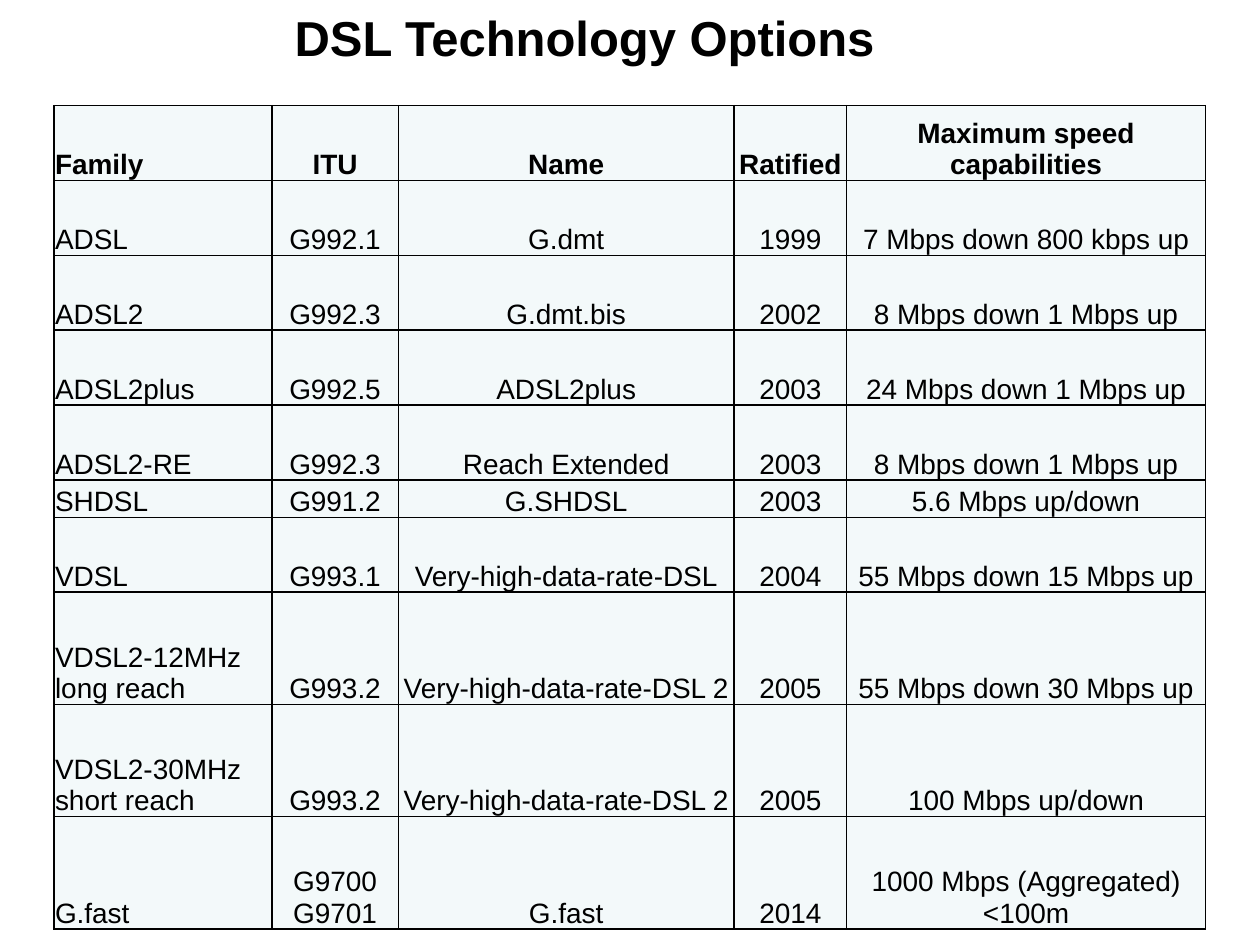
from dataclasses import dataclass

from lxml.etree import SubElement
from pptx import Presentation
from pptx.dml.color import RGBColor
from pptx.enum.text import MSO_ANCHOR, MSO_AUTO_SIZE, PP_ALIGN
from pptx.oxml.ns import qn
from pptx.util import Cm, Pt


@dataclass(frozen=True)
class Theme:
    font: str = "Arial"
    ink: str = "000000"
    cell: str = "F3F9FA"
    title_size: int = 28
    body_size: int = 16
    border: int = 1


THEME = Theme()
COL_WIDTHS = (4.39, 2.55, 6.77, 2.27, 7.23)
ROW_UNITS = (2, 2, 2, 2, 2, 1, 2, 3, 3, 3)
TABLE_HEIGHT = 16.6
ROWS = (
    ("Family", "ITU", "Name", "Ratified", "Maximum speed capabilities"),
    ("ADSL", "G992.1", "G.dmt", "1999", "7 Mbps down 800 kbps up"),
    ("ADSL2", "G992.3", "G.dmt.bis", "2002", "8 Mbps down 1 Mbps up"),
    ("ADSL2plus", "G992.5", "ADSL2plus", "2003", "24 Mbps down 1 Mbps up"),
    ("ADSL2-RE", "G992.3", "Reach Extended", "2003", "8 Mbps down 1 Mbps up"),
    ("SHDSL", "G991.2", "G.SHDSL", "2003", "5.6 Mbps up/down"),
    ("VDSL", "G993.1", "Very-high-data-rate-DSL", "2004", "55 Mbps down 15 Mbps up"),
    ("VDSL2-12MHz long reach", "G993.2", "Very-high-data-rate-DSL 2", "2005",
     "55 Mbps down 30 Mbps up"),
    ("VDSL2-30MHz short reach", "G993.2", "Very-high-data-rate-DSL 2", "2005",
     "100 Mbps up/down"),
    ("G.fast", "G9700 G9701", "G.fast", "2014", "1000 Mbps (Aggregated) <100m"),
)


def write_text(tf, text, size=THEME.body_size, bold=False, align=PP_ALIGN.LEFT):
    p = tf.paragraphs[0]
    p.alignment = align
    r = p.add_run()
    r.text = text
    r.font.name = THEME.font
    r.font.size = Pt(size)
    r.font.bold = bold
    r.font.color.rgb = RGBColor.from_string(THEME.ink)


def add_title(s, text):
    sp = s.shapes.add_textbox(Cm(5.69), Cm(0.03), Cm(12.34), Cm(1.45))
    tf = sp.text_frame
    tf.word_wrap = False
    tf.auto_size = MSO_AUTO_SIZE.SHAPE_TO_FIT_TEXT
    write_text(tf, text, size=THEME.title_size, bold=True)


def set_borders(cell):
    tc_pr = cell._tc.get_or_add_tcPr()
    for side in ("lnL", "lnR", "lnT", "lnB"):
        ln = SubElement(tc_pr, qn(f"a:{side}"), w=str(Pt(THEME.border)))
        fill = SubElement(ln, qn("a:solidFill"))
        SubElement(fill, qn("a:srgbClr"), val=THEME.ink)


def format_cell(cell):
    cell.margin_left = cell.margin_right = cell.margin_top = Cm(0.02)
    cell.margin_bottom = 0
    cell.vertical_anchor = MSO_ANCHOR.BOTTOM
    set_borders(cell)
    cell.fill.solid()
    cell.fill.fore_color.rgb = RGBColor.from_string(THEME.cell)


def add_options_table(s):
    table = s.shapes.add_table(
        len(ROWS), len(COL_WIDTHS), Cm(1.09), Cm(2.13),
        Cm(sum(COL_WIDTHS)), Cm(TABLE_HEIGHT),
    ).table
    table.first_row = True
    table.horz_banding = False
    for column, width in zip(table.columns, COL_WIDTHS):
        column.width = Cm(width)
    for row, units in zip(table.rows, ROW_UNITS):
        row.height = Cm(TABLE_HEIGHT * units / sum(ROW_UNITS))
    for i, values in enumerate(ROWS):
        for j, text in enumerate(values):
            cell = table.cell(i, j)
            format_cell(cell)
            align = PP_ALIGN.CENTER if j else PP_ALIGN.LEFT
            write_text(cell.text_frame, text, bold=i == 0, align=align)


def main():
    prs = Presentation()
    prs.slide_width, prs.slide_height = Cm(25.4), Cm(19.05)
    s = prs.slides.add_slide(prs.slide_layouts[6])
    add_options_table(s)
    add_title(s, "DSL Technology Options")
    prs.save("out.pptx")


if __name__ == "__main__":
    main()
